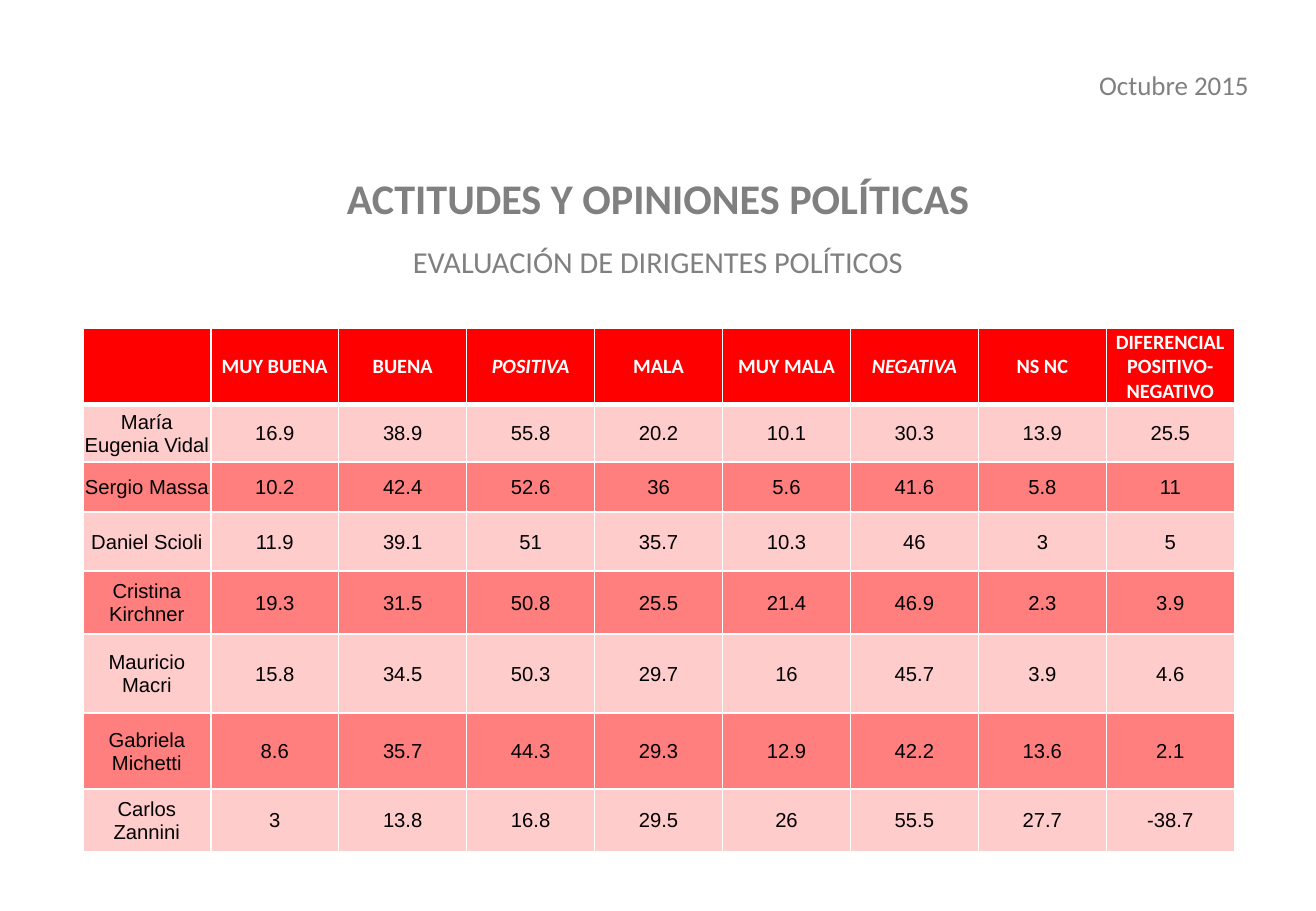
from dataclasses import dataclass

from pptx import Presentation
from pptx.dml.color import RGBColor as Rgb
from pptx.enum.text import MSO_ANCHOR as Anchor, PP_ALIGN as Align
from pptx.oxml import parse_xml
from pptx.oxml.ns import nsdecls, qn
from pptx.oxml.xmlchemy import OxmlElement as Element
from pptx.table import _Cell as Cell
from pptx.util import Inches, Pt

RED = Rgb(0xFF, 0x00, 0x00)
WHITE = Rgb(0xFF, 0xFF, 0xFF)
BLACK = Rgb(0x00, 0x00, 0x00)
GRAY = Rgb(0x80, 0x80, 0x80)

WIDE, HIGH = Inches(10.83), Inches(7.5)
TINTS = (50, 20)  # opacity of even and odd body rows, in percent

TITLE = {"name": "Calibri", "size": Pt(25), "bold": True}
TOPIC = {"name": "Calibri", "size": Pt(18), "bold": False}
DATE = {"name": "Calibri", "size": Pt(16)}
HEAD = {"name": "Calibri", "size": Pt(12), "bold": True}
BODY = {"name": "Arial", "size": Pt(12), "bold": False}
INSET = {"margin_left": Inches(0.01), "margin_top": Inches(0.01),
         "margin_right": Inches(0.01), "margin_bottom": 0,
         "vertical_anchor": Anchor.MIDDLE}
FLAT = {"margin_left": 0, "margin_top": 0, "margin_right": 0,
        "margin_bottom": 0, "vertical_anchor": Anchor.TOP, "word_wrap": True}


@dataclass
class Box:
    """A frame given as shares of the slide's width and height."""
    x: float
    y: float
    w: float
    h: float

    def rect(self) -> tuple[int, int, int, int]:
        return (round(self.x * WIDE), round(self.y * HIGH),
                round(self.w * WIDE), round(self.h * HIGH))


@dataclass
class Row:
    """A table row; high is a share of the slide's height."""
    high: float
    name: str
    cells: tuple[str, ...]


ROWS = [
    Row(0.084, "", ("MUY BUENA", "BUENA", "POSITIVA", "MALA", "MUY MALA",
                    "NEGATIVA", "NS NC", "DIFERENCIAL POSITIVO- NEGATIVO")),
    Row(0.063, "María Eugenia Vidal",
        ("16.9", "38.9", "55.8", "20.2", "10.1", "30.3", "13.9", "25.5")),
    Row(0.055, "Sergio Massa",
        ("10.2", "42.4", "52.6", "36", "5.6", "41.6", "5.8", "11")),
    Row(0.065, "Daniel Scioli",
        ("11.9", "39.1", "51", "35.7", "10.3", "46", "3", "5")),
    Row(0.069, "Cristina Kirchner",
        ("19.3", "31.5", "50.8", "25.5", "21.4", "46.9", "2.3", "3.9")),
    Row(0.087, "Mauricio Macri",
        ("15.8", "34.5", "50.3", "29.7", "16", "45.7", "3.9", "4.6")),
    Row(0.083, "Gabriela Michetti",
        ("8.6", "35.7", "44.3", "29.3", "12.9", "42.2", "13.6", "2.1")),
    Row(0.069, "Carlos Zannini",
        ("3", "13.8", "16.8", "29.5", "26", "55.5", "27.7", "-38.7")),
]
ITALIC = ("POSITIVA", "NEGATIVA")


def apply(item: object, form: dict) -> None:
    for key, value in form.items():
        setattr(item, key, value)


def write(para, text: str, form: dict, color: Rgb, align: Align) -> None:
    para.alignment = align
    run = para.add_run()
    run.text = text
    apply(run.font, form)
    run.font.color.rgb = color


def paint(cell: Cell, tint: int) -> None:
    """Fill a cell with red at the given opacity in percent."""
    cell.fill.solid()
    cell.fill.fore_color.rgb = RED
    if tint < 100:
        alpha = Element("a:alpha")
        alpha.set("val", str(tint * 1000))
        cell._tc.tcPr.find(qn("a:solidFill"))[0].append(alpha)


def edge(cell: Cell, top: int, base: int) -> None:
    """Draw white borders; top and base are widths in points."""
    sides = {"L": 1, "R": 1, "T": top, "B": base}
    for spot, (side, width) in enumerate(sides.items()):
        line = parse_xml(
            f'<a:ln{side} {nsdecls("a")} w="{Pt(width)}"><a:solidFill>'
            f'<a:srgbClr val="{WHITE}"/></a:solidFill></a:ln{side}>')
        cell._tc.tcPr.insert(spot, line)


def add_grid(slide, box: Box) -> None:
    count = len(ROWS[0].cells) + 1
    grid = slide.shapes.add_table(len(ROWS), count, *box.rect()).table
    grid.horz_banding = False
    for col in grid.columns:
        col.width = round(box.w * WIDE / count)
    for r, row in enumerate(ROWS):
        grid.rows[r].height = round(row.high * HIGH)
        form, color = (BODY, BLACK) if r else (HEAD, WHITE)
        for c, text in enumerate((row.name, *row.cells)):
            cell = grid.cell(r, c)
            apply(cell, INSET)
            paint(cell, TINTS[r % 2] if r else 100)
            edge(cell, 3 if r == 1 else 1, 1 if r else 3)
            if text:
                write(cell.text_frame.paragraphs[0], text,
                      form | {"italic": text in ITALIC}, color, Align.CENTER)


def add_title(slide, box: Box) -> None:
    title = slide.shapes.title
    apply(title, dict(zip(("left", "top", "width", "height"), box.rect())))
    frame = title.text_frame
    apply(frame, FLAT)
    write(frame.paragraphs[0], "ACTITUDES Y OPINIONES POLÍTICAS",
          TITLE, GRAY, Align.CENTER)
    topic = frame.add_paragraph()
    topic.space_before = Pt(12)
    write(topic, "EVALUACIÓN DE DIRIGENTES POLÍTICOS",
          TOPIC, GRAY, Align.CENTER)


def add_date(slide, box: Box) -> None:
    frame = slide.shapes.add_textbox(*box.rect()).text_frame
    frame.word_wrap = True
    write(frame.paragraphs[0], "Octubre 2015", DATE, GRAY, Align.RIGHT)


def main() -> None:
    deck = Presentation()
    deck.slide_width, deck.slide_height = WIDE, HIGH
    slide = deck.slides.add_slide(deck.slide_layouts[5])
    add_grid(slide, Box(0.063, 0.36, 0.875, sum(r.high for r in ROWS)))
    add_title(slide, Box(0, 0.189, 1, 0.12))
    add_date(slide, Box(0.791, 0.069, 0.167, 0.049))
    deck.save("out.pptx")


if __name__ == "__main__":
    main()
